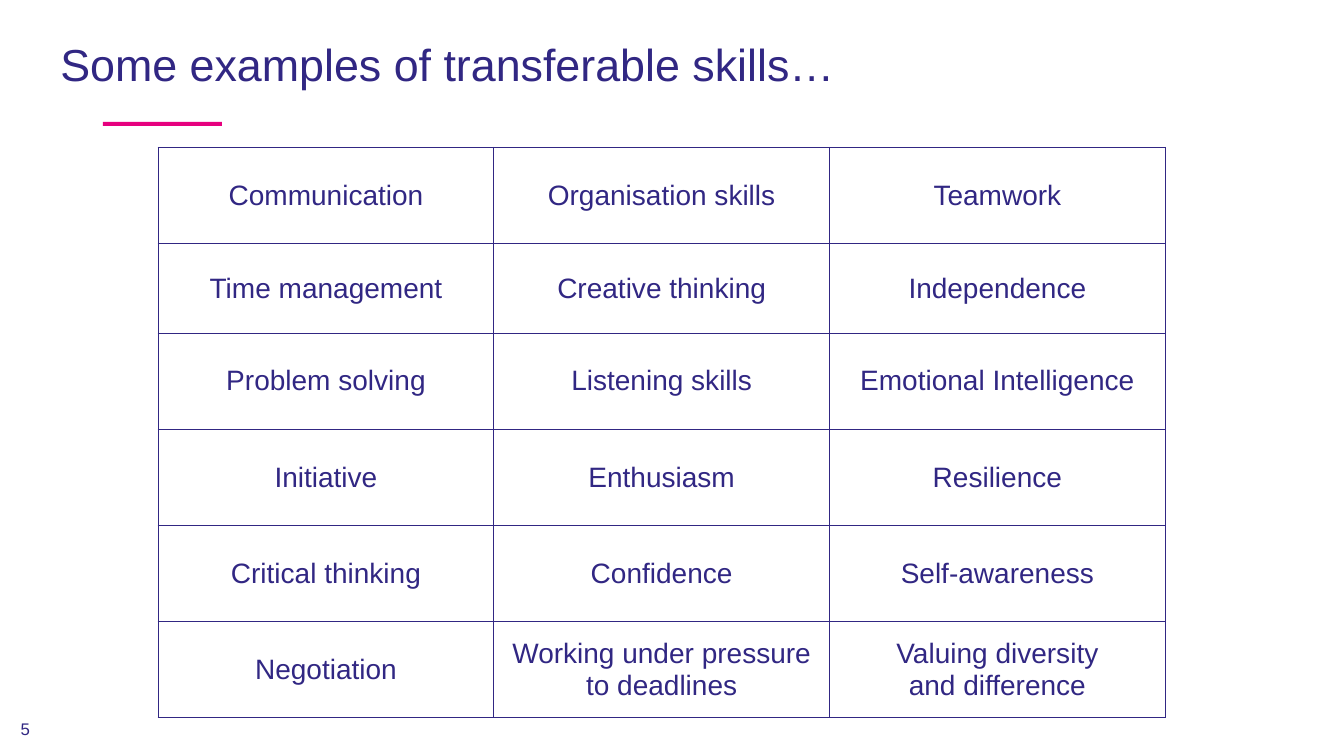
import pptx
import pptx.dml.color
import pptx.enum.shapes
import pptx.enum.text
import pptx.oxml
import pptx.oxml.ns
import pptx.util

Pt = pptx.util.Pt
ALIGN = pptx.enum.text.PP_ALIGN
ANCHOR = pptx.enum.text.MSO_ANCHOR

INDIGO = pptx.dml.color.RGBColor(0x31, 0x27, 0x83)
PINK = pptx.dml.color.RGBColor(0xE6, 0x00, 0x7E)
FONT = "Arial"

TITLE = "Some examples of transferable skills…"
PAGE_NUMBER = "5"
SKILLS = [
    ("Communication", "Organisation skills", "Teamwork"),
    ("Time management", "Creative thinking", "Independence"),
    ("Problem solving", "Listening skills", "Emotional Intelligence"),
    ("Initiative", "Enthusiasm", "Resilience"),
    ("Critical thinking", "Confidence", "Self-awareness"),
    ("Negotiation", "Working under pressure to deadlines",
     "Valuing diversity\nand difference"),
]

TABLE_LEFT, TABLE_TOP = 113, 105.3
COL_WIDTH = 239.8
ROW_HEIGHTS = [68.7, 64, 68.7, 68.7, 68.7, 68.7]


def write(tf, text, size, align=ALIGN.LEFT, spacing=None):
    tf.word_wrap = True
    for i, line in enumerate(text.split("\n")):
        p = tf.paragraphs[0] if i == 0 else tf.add_paragraph()
        p.alignment = align
        if spacing:
            p.line_spacing = spacing
        r = p.add_run()
        r.text = line
        r.font.name = FONT
        r.font.size = Pt(size)
        r.font.color.rgb = INDIGO


def add_text(s, box, text, size, anchor, **fmt):
    tf = s.shapes.add_textbox(*map(Pt, box)).text_frame
    tf.vertical_anchor = anchor
    write(tf, text, size, **fmt)


def add_borders(cell, width):
    tcPr = cell._tc.get_or_add_tcPr()
    for side in ("lnL", "lnR", "lnT", "lnB"):
        tcPr.append(pptx.oxml.parse_xml(
            f'<a:{side} {pptx.oxml.ns.nsdecls("a")} w="{Pt(width)}">'
            f'<a:solidFill><a:srgbClr val="{INDIGO}"/></a:solidFill></a:{side}>'))


def add_skills_table(s):
    n_cols = len(SKILLS[0])
    table = s.shapes.add_table(
        len(SKILLS), n_cols, Pt(TABLE_LEFT), Pt(TABLE_TOP),
        Pt(COL_WIDTH * n_cols), Pt(sum(ROW_HEIGHTS))).table
    table.first_row = False
    table.horz_banding = False
    for col in table.columns:
        col.width = Pt(COL_WIDTH)
    for row, height, skills in zip(table.rows, ROW_HEIGHTS, SKILLS):
        row.height = Pt(height)
        for cell, skill in zip(row.cells, skills):
            add_borders(cell, 1)
            cell.fill.background()
            cell.margin_left = cell.margin_right = Pt(5)
            cell.margin_top = cell.margin_bottom = Pt(0)
            cell.vertical_anchor = ANCHOR.MIDDLE
            write(cell.text_frame, skill, 20, align=ALIGN.CENTER)


def main():
    prs = pptx.Presentation()
    prs.slide_width, prs.slide_height = Pt(960), Pt(540)
    s = prs.slides.add_slide(prs.slide_layouts[6])

    sp = s.shapes.add_shape(pptx.enum.shapes.MSO_SHAPE.RECTANGLE,
                            Pt(73.5), Pt(87.1), Pt(85), Pt(2.9))
    sp.shadow.inherit = False
    sp.fill.solid()
    sp.fill.fore_color.rgb = PINK
    sp.line.fill.background()

    add_text(s, (0, 508.3, 36, 25.2), PAGE_NUMBER, 12, ANCHOR.MIDDLE,
             align=ALIGN.CENTER)
    add_text(s, (36, 17.3, 832.3, 51.1), TITLE, 32, ANCHOR.BOTTOM, spacing=0.9)
    add_skills_table(s)
    prs.save("out.pptx")


if __name__ == "__main__":
    main()
